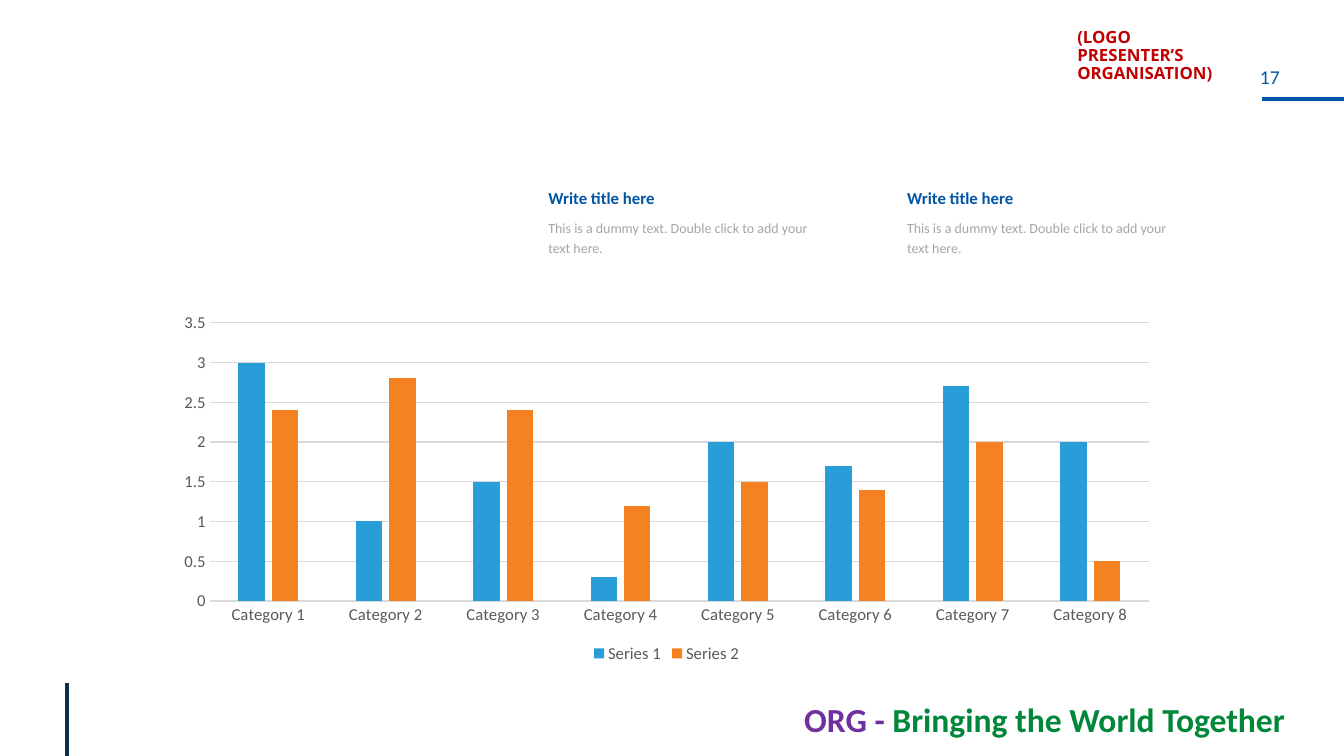
from dataclasses import dataclass

from lxml.etree import SubElement
from pptx import Presentation
from pptx.chart.data import CategoryChartData as ChartData
from pptx.dml.color import RGBColor as Rgb
from pptx.enum.chart import XL_CHART_TYPE as ChartType, XL_LEGEND_POSITION as LegendPos
from pptx.enum.chart import XL_TICK_MARK as Tick
from pptx.enum.text import PP_ALIGN as Align
from pptx.oxml.ns import qn
from pptx.util import Cm, Pt


@dataclass(frozen=True)
class Theme:
    font: str = "Calibri"
    logo_font: str = "Open Sans"
    blue: str = "0055A5"
    navy: str = "0A324B"
    purple: str = "7030A0"
    green: str = "008739"
    red: str = "C00000"
    grey: str = "808080"
    axis_text: str = "595959"
    grid: str = "D9D9D9"
    series: tuple = ("289DD8", "F58220")
    slogan_size: float = 24
    number_size: float = 14
    title_size: float = 12
    body_size: float = 10
    chart_size: float = 11.9
    rule_width: float = 3
    grid_width: float = 0.75


def add_run(paragraph, text, *, size, color, font, bold=False, alpha=None):
    """Add formatted text to a paragraph."""
    run = paragraph.add_run()
    run.text = text
    run.font.name, run.font.size, run.font.bold = font, Pt(size), bold
    run.font.color.rgb = Rgb.from_string(color)
    if alpha is not None:
        tint = run.font.fill._xPr.find(f"{qn('a:solidFill')}/{qn('a:srgbClr')}")
        SubElement(tint, qn("a:alpha")).set("val", str(alpha * 1000))


class SlideBuilder:
    """Draw themed elements on one slide."""

    def __init__(self, slide, theme):
        """Keep the slide and its theme."""
        self.slide, self.theme = slide, theme

    def text(self, box, paragraphs, *, align=Align.LEFT, wrap=True, insets=None,
             line_spacing=None, space_before=0):
        """Add a text box of paragraphs, each a list of (text, format) runs."""
        frame = self.slide.shapes.add_textbox(*map(Cm, box)).text_frame
        frame.word_wrap = wrap
        if insets:
            side, edge = map(Cm, insets)
            frame.margin_left = frame.margin_right = side
            frame.margin_top = frame.margin_bottom = edge
        for index, runs in enumerate(paragraphs):
            paragraph = frame.add_paragraph() if index else frame.paragraphs[0]
            paragraph.alignment = align
            paragraph.line_spacing = line_spacing
            if index:
                paragraph.space_before = Pt(space_before)
            for words, style in runs:
                add_run(paragraph, words, **{"font": self.theme.font, **style})

    def rule(self, ends, color):
        """Add a straight line between two points."""
        line = self.slide.shapes.add_connector(1, *map(Cm, ends))
        line.line.color.rgb = Rgb.from_string(color)
        line.line.width = Pt(self.theme.rule_width)
        SubElement(line._element.spPr, qn("a:effectLst"))

    def note(self, left):
        """Add a title with its description."""
        theme = self.theme
        title = dict(size=theme.title_size, color=theme.blue, bold=True)
        body = dict(size=theme.body_size, color=theme.grey, alpha=70)
        self.text((left, 4.5, 6.6, 2.1), [
            [("Write title here", title)],
            [("This is a dummy text. Double click to add your text here.", body)],
        ], insets=(0, 0.13), line_spacing=1.2, space_before=6)

    def columns(self, box, categories, series):
        """Add a clustered column chart."""
        theme = self.theme
        data = ChartData()
        data.categories = categories
        for name, values in series.items():
            data.add_series(name, values)
        chart = self.slide.shapes.add_chart(
            ChartType.COLUMN_CLUSTERED, *map(Cm, box), data).chart
        chart.has_title = False
        chart.font.name, chart.font.size = theme.font, Pt(theme.chart_size)
        chart.font.color.rgb = Rgb.from_string(theme.axis_text)
        chart.has_legend = True
        chart.legend.position = LegendPos.BOTTOM
        chart.legend.include_in_layout = False
        plot = chart.plots[0]
        plot.vary_by_categories = False
        plot.gap_width, plot.overlap = 219, -27
        for bars, color in zip(plot.series, theme.series):
            bars.format.fill.solid()
            bars.format.fill.fore_color.rgb = Rgb.from_string(color)
            bars.invert_if_negative = False
        for axis in (chart.category_axis, chart.value_axis):
            axis.major_tick_mark = axis.minor_tick_mark = Tick.NONE
        scale = chart.value_axis
        scale.minimum_scale, scale.maximum_scale, scale.major_unit = 0, 3.5, 0.5
        scale.format.line.fill.background()
        for line in (chart.category_axis.format.line, scale.major_gridlines.format.line):
            line.color.rgb = Rgb.from_string(theme.grid)
            line.width = Pt(theme.grid_width)


def main():
    """Build and save the slide."""
    deck = Presentation()
    deck.slide_width, deck.slide_height = Cm(33.87), Cm(19.05)
    theme = Theme()
    page = SlideBuilder(deck.slides.add_slide(deck.slide_layouts[6]), theme)

    slogan = dict(size=theme.slogan_size, bold=True)
    page.text((19.1, 17.48, 14.45, 1.27), [[
        ("ORG - ", {**slogan, "color": theme.purple}),
        ("Bringing the World Together", {**slogan, "color": theme.green}),
    ]], align=Align.CENTER, wrap=False)
    page.rule((31.8, 2.49, 33.87, 2.49), theme.blue)
    page.text((30.48, 1.63, 3.05, 0.84),
              [[("17", dict(size=theme.number_size, color=theme.blue))]],
              align=Align.CENTER, wrap=False, insets=(0, 0))
    page.rule((1.68, 17.2, 1.68, 19.05), theme.navy)
    for left in (13.82, 22.86):
        page.note(left)
    page.columns((4.14, 7.7, 25.32, 9.12), [f"Category {n}" for n in range(1, 9)], {
        "Series 1": (3, 1, 1.5, 0.3, 2, 1.7, 2.7, 2),
        "Series 2": (2.4, 2.8, 2.4, 1.2, 1.5, 1.4, 2, 0.5),
    })
    page.text((26.9, 0.61, 4.04, 2.57), [[
        ("(LOGO PRESENTER’S ORGANISATION)",
         dict(size=theme.title_size, color=theme.red, font=theme.logo_font, bold=True)),
    ]], line_spacing=0.9)
    deck.save("out.pptx")


if __name__ == "__main__":
    main()
